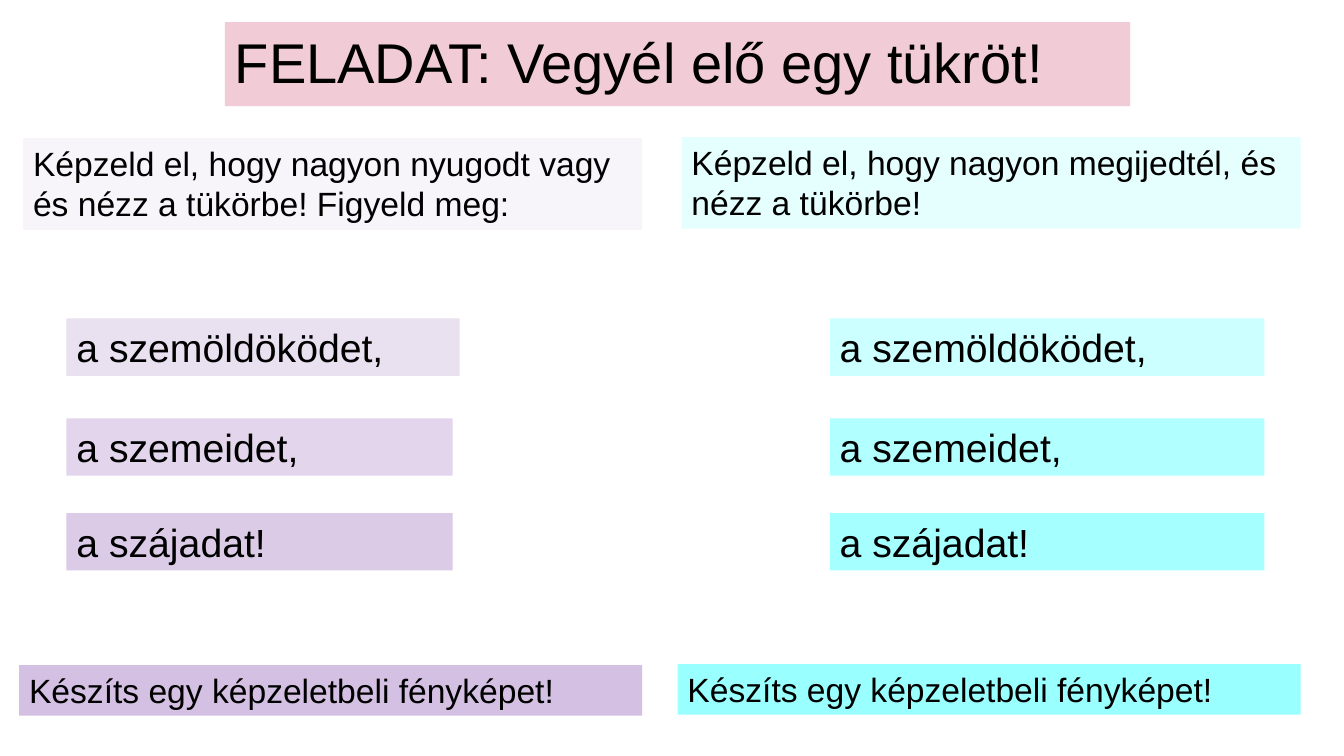
from lxml import etree
from pptx import Presentation
from pptx.dml.color import RGBColor
from pptx.enum.text import MSO_ANCHOR, MSO_AUTO_SIZE, PP_ALIGN
from pptx.oxml.ns import qn
from pptx.util import Inches, Pt

BLACK = RGBColor(0x00, 0x00, 0x00)
PINK = RGBColor(0xEE, 0xC0, 0xCC)
PURPLE = RGBColor(0x70, 0x30, 0xA0)
CYAN = RGBColor(0x00, 0xFF, 0xFF)

# Content: each column runs from a task, through features, to a closing line
TITLE = "FELADAT: Vegyél elő egy tükröt!"
FEATURES = ["a szemöldöködet,", "a szemeidet,", "a szájadat!"]
CLOSING = "Készíts egy képzeletbeli fényképet!"
COLUMNS = [
    {
        "task": "Képzeld el, hogy nagyon nyugodt vagy és nézz a tükörbe! Figyeld meg:",
        "color": PURPLE, "task_at": (0.23, 1.37), "closing_at": (0.19, 6.6),
        "feature_left": 0.66, "feature_widths": [3.9, 3.83, 3.83],
        "opacities": [5, 15, 20, 25, 30],
    },
    {
        "task": "Képzeld el, hogy nagyon megijedtél, és nézz a tükörbe!",
        "color": CYAN, "task_at": (6.76, 1.36), "closing_at": (6.72, 6.59),
        "feature_left": 8.23, "feature_widths": [4.31, 4.31, 4.31],
        "opacities": [10, 20, 30, 35, 40],
    },
]

# Shared layout, in inches
FEATURE_TOPS = [3.16, 4.15, 5.09]
FEATURE_HEIGHT = 0.57
TASK_SIZE = (6.14, 0.91)
CLOSING_SIZE = (6.18, 0.5)


def write_box(page, text, left, top, width, height, *, size, color, opacity, box=None):
    """Fill a text box, or the given placeholder, with tinted colour and text."""
    place = [Inches(value) for value in (left, top, width, height)]
    if box is None:
        box = page.shapes.add_textbox(*place)
    box.left, box.top, box.width, box.height = place
    box.fill.solid()
    box.fill.fore_color.rgb = color
    tint = box._element.spPr.find(qn("a:solidFill"))[0]
    etree.SubElement(tint, qn("a:alpha")).set("val", str(opacity * 1000))

    frame = box.text_frame
    frame.word_wrap = True
    frame.auto_size = MSO_AUTO_SIZE.SHAPE_TO_FIT_TEXT
    frame.vertical_anchor = MSO_ANCHOR.TOP
    para = frame.paragraphs[0]
    para.alignment = PP_ALIGN.LEFT
    span = para.add_run()
    span.text = text
    span.font.name = "Arial"
    span.font.size = Pt(size)
    span.font.color.rgb = BLACK


def main():
    deck = Presentation()
    deck.slide_width, deck.slide_height = Inches(13.33), Inches(7.5)
    page = deck.slides.add_slide(deck.slide_layouts[5])

    # Title
    write_box(page, TITLE, 2.23, 0.22, 8.98, 0.77, size=40, color=PINK,
              opacity=80, box=page.shapes.title)

    # Calm and frightened columns, each growing stronger in colour downwards
    for column in COLUMNS:
        color = column["color"]
        task_opacity, *feature_opacities, closing_opacity = column["opacities"]
        write_box(page, column["task"], *column["task_at"], *TASK_SIZE,
                  size=24, color=color, opacity=task_opacity)
        for text, top, width, opacity in zip(
                FEATURES, FEATURE_TOPS, column["feature_widths"], feature_opacities):
            write_box(page, text, column["feature_left"], top, width, FEATURE_HEIGHT,
                      size=28, color=color, opacity=opacity)
        write_box(page, CLOSING, *column["closing_at"], *CLOSING_SIZE,
                  size=24, color=color, opacity=closing_opacity)

    deck.save("out.pptx")


if __name__ == "__main__":
    main()
